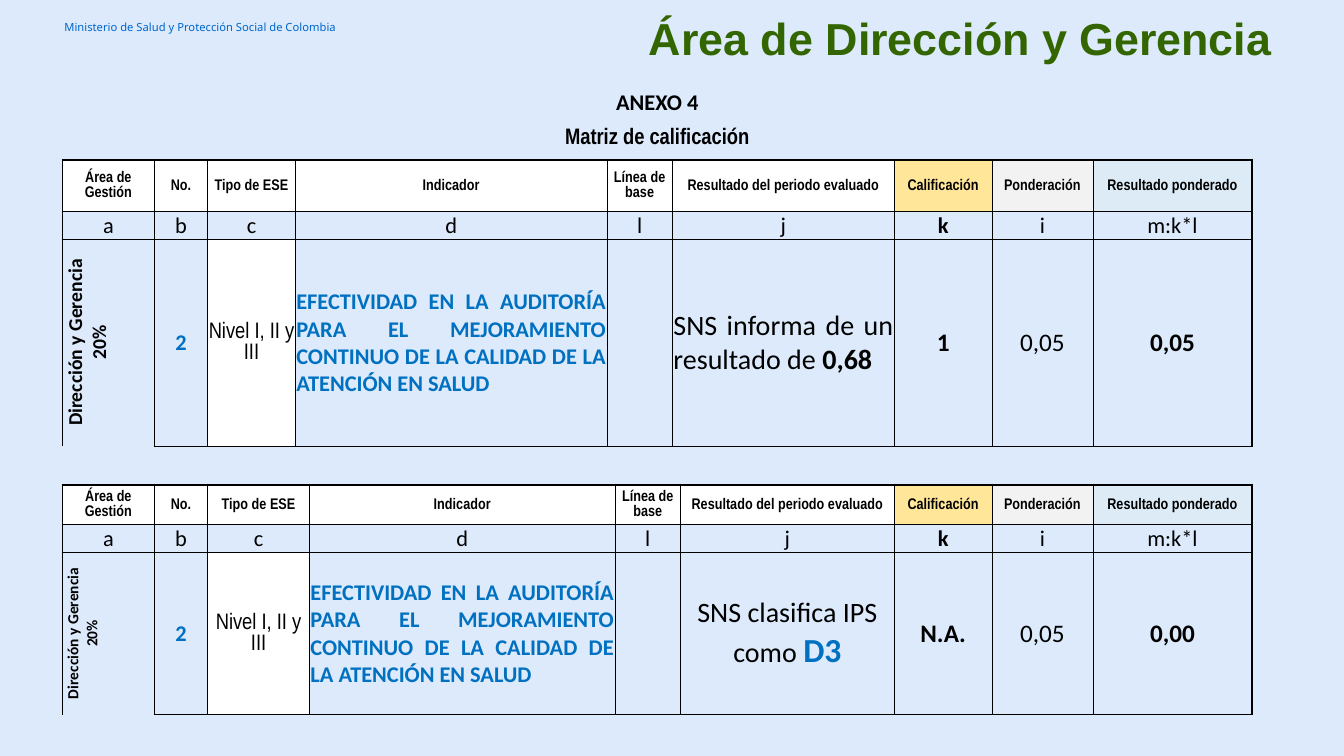
from pptx import Presentation
from pptx.dml.color import RGBColor
from pptx.enum.text import MSO_ANCHOR, PP_ALIGN
from pptx.oxml.ns import qn
from pptx.util import Inches, Pt
from lxml import etree

MIDDLE = MSO_ANCHOR.MIDDLE
CENTER, JUSTIFY, RIGHT = PP_ALIGN.CENTER, PP_ALIGN.JUSTIFY, PP_ALIGN.RIGHT
BLACK, WHITE, BLUE = "000000", "FFFFFF", "0070C0"
NARROW = "Arial Narrow"
PLAIN_STYLE = "{2D5ABB26-0587-4C30-8999-92F81FD0307C}"
THIN, THICK = 0.5, 1.5

HEADERS = ["Área de Gestión", "No.", "Tipo de ESE", "Indicador", "Línea de base",
           "Resultado del periodo evaluado", "Calificación", "Ponderación",
           "Resultado ponderado"]
HEADER_FILLS = [WHITE] * 6 + ["FFE699", "F2F2F2", "DDEBF7"]
LETTERS = ["a", "b", "c", "d", "l", "j", "k", "i", "m:k*l"]
INDICATOR = ("EFECTIVIDAD EN LA AUDITORÍA PARA EL MEJORAMIENTO CONTINUO "
             "DE LA CALIDAD DE LA ATENCIÓN EN SALUD")


def color(value):
    return RGBColor.from_string(value)


def style_font(font, size, name="Calibri", ink=BLACK, bold=False):
    font.size = Pt(size)
    font.name = name
    font.bold = bold
    font.color.rgb = color(ink)


def write_cell(cell, text, size, name="Calibri", ink=BLACK, bold=False, align=CENTER):
    para = cell.text_frame.paragraphs[0]
    para.alignment = align
    style_font(para.font, size, name, ink, bold)
    if text:
        para.add_run().text = text
    return para


def add_border(cell, side, width):
    line = etree.SubElement(cell._tc.get_or_add_tcPr(), qn(f"a:{side}"))
    line.set("w", str(Pt(width)))
    fill = etree.SubElement(line, qn("a:solidFill"))
    etree.SubElement(fill, qn("a:srgbClr")).set("val", BLACK)


def format_cell(cell, row, column, last_row, last_column):
    cell.vertical_anchor = MIDDLE
    cell.margin_left = cell.margin_top = cell.margin_right = Inches(0.01)
    cell.margin_bottom = 0
    if row >= 2:
        add_border(cell, "lnL", THICK if column == 0 else THIN)
        add_border(cell, "lnR", THICK if column == last_column else THIN)
        add_border(cell, "lnT", THICK if row == 2 else THIN)
        if row < last_row or column > 0:
            add_border(cell, "lnB", THIN)
    elif row == 1:
        add_border(cell, "lnB", THICK)
    if row == 2:
        fill = HEADER_FILLS[column]
    elif row == last_row and column == 2:
        fill = WHITE
    else:
        fill = None
    if fill:
        cell.fill.solid()
        cell.fill.fore_color.rgb = color(fill)
    else:
        cell.fill.background()


def add_matrix(slide, left, top, widths, heights, titles, title_size, area_size,
               result, result_align, score, weighted):
    frame = slide.shapes.add_table(len(heights), len(widths), Inches(left), Inches(top),
                                   Inches(sum(widths)), Inches(sum(heights)))
    table = frame.table
    table.first_row = table.horz_banding = False
    table._tbl.tblPr.find(qn("a:tableStyleId")).text = PLAIN_STYLE
    for column, width in zip(table.columns, widths):
        column.width = Inches(width)
    for row, height in zip(table.rows, heights):
        row.height = Inches(height)
    last_row, last_column = len(heights) - 1, len(widths) - 1
    for row in range(len(heights)):
        for column in range(len(widths)):
            format_cell(table.cell(row, column), row, column, last_row, last_column)

    for row, (title, name) in enumerate(zip(titles, ["Calibri", NARROW])):
        table.cell(row, 0).merge(table.cell(row, last_column))
        write_cell(table.cell(row, 0), title, title_size, name, bold=True)
    for column, (header, letter) in enumerate(zip(HEADERS, LETTERS)):
        write_cell(table.cell(2, column), header, 11, NARROW, bold=True)
        write_cell(table.cell(3, column), letter, 16, bold=letter == "k")

    area, number, level, indicator, _, outcome, grade, weight, total = [
        table.cell(last_row, column) for column in range(len(widths))]
    area._tc.get_or_add_tcPr().set("vert", "vert270")
    write_cell(area, "Dirección y Gerencia 20%", area_size, bold=True)
    write_cell(number, "2", 16, ink=BLUE, bold=True)
    write_cell(level, "Nivel I, II y III", 16, NARROW)
    write_cell(indicator, INDICATOR, 16, ink=BLUE, bold=True, align=JUSTIFY)
    lead, value, value_size, value_ink = result
    para = write_cell(outcome, lead, 20, align=result_align)
    span = para.add_run()
    span.text = value
    style_font(span.font, value_size, ink=value_ink, bold=True)
    write_cell(grade, score, 18, bold=True)
    write_cell(weight, "0,05", 18)
    write_cell(total, weighted, 18, bold=True)


def add_heading(slide, left, top, width, height):
    title = slide.shapes.title
    title.left, title.top = Inches(left), Inches(top)
    title.width, title.height = Inches(width), Inches(height)
    title.text_frame.text = "Área de Dirección y Gerencia"
    title.text_frame.vertical_anchor = MIDDLE
    para = title.text_frame.paragraphs[0]
    para.alignment = RIGHT
    para.line_spacing = 0.9
    style_font(para.font, 32, "Arial", "336600", True)


def add_ministry(slide, left, top, width, height):
    box = slide.shapes.add_textbox(Inches(left), Inches(top), Inches(width), Inches(height))
    box.text_frame.word_wrap = True
    box.text_frame.vertical_anchor = MIDDLE
    box.text_frame.text = "Ministerio de Salud y Protección Social de Colombia"
    style_font(box.text_frame.paragraphs[0].font, 8, "Noto Sans", "0066CD")


def main():
    deck = Presentation()
    deck.slide_width, deck.slide_height = Inches(13.33), Inches(7.5)
    page = deck.slides.add_slide(deck.slide_layouts[5])
    page.background.fill.solid()
    page.background.fill.fore_color.rgb = color("DCEAFB")
    add_ministry(page, 0.54, 0.14, 3.12, 0.26)
    add_heading(page, 5.56, 0.06, 7.16, 0.7)
    add_matrix(page, 0.62, 0.87, [0.91, 0.53, 0.87, 3.09, 0.65, 2.2, 0.97, 1, 1.58],
               [0.2, 0.44, 0.51, 0.19, 1.46], ["ANEXO 4", "Matriz de calificación"], 16, 14,
               ("SNS informa de un resultado de ", "0,68", 20, BLACK), JUSTIFY, "1", "0,05")
    add_matrix(page, 0.62, 4.3, [0.91, 0.53, 1.01, 3.03, 0.65, 2.12, 0.97, 1, 1.58],
               [0.23, 0.28, 0.39, 0.23, 1.29], ["", ""], 10, 11,
               ("SNS clasifica IPS como ", "D3", 24, BLUE), CENTER, "N.A.", "0,00")
    deck.save("out.pptx")


if __name__ == "__main__":
    main()
